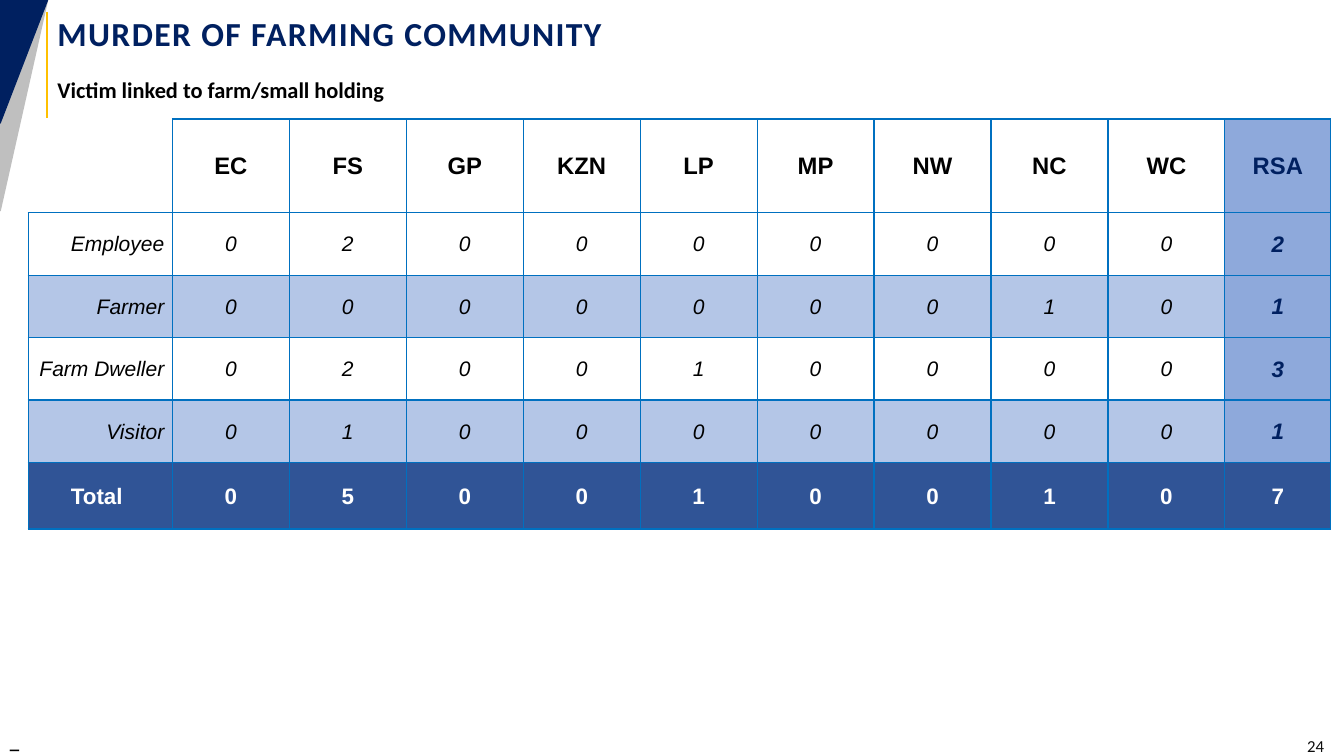
from lxml.etree import SubElement
from pptx import Presentation
from pptx.dml.color import RGBColor
from pptx.enum.shapes import MSO_CONNECTOR as Conn, MSO_SHAPE as Shape
from pptx.enum.text import MSO_ANCHOR as Anchor, MSO_AUTO_SIZE as Fit, PP_ALIGN as Align
from pptx.oxml.ns import qn
from pptx.util import Inches, Pt

COLORS = {
    "navy": "002060", "grey": "BFBFBF", "gold": "FFC000", "black": "000000",
    "ink": "0D0D0D", "white": "FFFFFF", "border": "0070C0",
    "band": "B4C6E7", "sum": "8EA9DB", "total": "305496",
}
HEADS = ["", "EC", "FS", "GP", "KZN", "LP", "MP", "NW", "NC", "WC", "RSA"]
COUNTS = {
    "Employee": [0, 2, 0, 0, 0, 0, 0, 0, 0],
    "Farmer": [0, 0, 0, 0, 0, 0, 0, 1, 0],
    "Farm Dweller": [0, 2, 0, 0, 1, 0, 0, 0, 0],
    "Visitor": [0, 1, 0, 0, 0, 0, 0, 0, 0],
}
WIDTHS = [1.43] + [1.16] * 9 + [1.05]
HEIGHTS = [0.93] + [0.62] * 4 + [0.66]


def color(name):
    return RGBColor.from_string(COLORS[name])


def style(para, size, tone, face, bold=False, italic=False, align=Align.LEFT):
    font = para.font
    font.size, font.name, font.bold, font.italic = Pt(size), face, bold, italic
    font.color.rgb = color(tone)
    para.alignment = align


def place(shape, left, top, width, height):
    shape.left, shape.top = Inches(left), Inches(top)
    shape.width, shape.height = Inches(width), Inches(height)


def add_corner(slide, left, top, width):
    """Draw the two hanging triangles and the upright rule beside the title."""
    for tone, height in (("grey", 2.09), ("navy", 1.22)):
        wedge = slide.shapes.add_shape(
            Shape.RIGHT_TRIANGLE, Inches(left), Inches(top), Inches(width), Inches(height))
        wedge._element.spPr.xfrm.set("flipV", "1")
        wedge.shadow.inherit = False
        wedge.fill.solid()
        wedge.fill.fore_color.rgb = color(tone)
        wedge.line.color.rgb = color(tone)
        wedge.line.width = Pt(1.25)
    edge = Inches(left + width)
    rule = slide.shapes.add_connector(
        Conn.STRAIGHT, edge, Inches(top + 1.17), edge, Inches(top + 0.12))
    rule.line.color.rgb = color("gold")
    rule.line.width = Pt(1.25)
    SubElement(rule._element.spPr, qn("a:effectLst"))


def add_heads(slide, left, top, width):
    """Fill the title and body placeholders."""
    title, body = slide.shapes.title, slide.placeholders[1]
    place(title, left, top, width, 0.49)
    place(body, left, top + 0.56, width, 0.48)
    for holder, text, anchor in (
            (title, "MURDER OF FARMING COMMUNITY", Anchor.MIDDLE),
            (body, "Victim linked to farm/small holding", Anchor.TOP)):
        frame = holder.text_frame
        frame.text = text
        frame.auto_size = Fit.NONE
        frame.vertical_anchor = anchor
    para = title.text_frame.paragraphs[0]
    style(para, 24, "navy", "Calibri", bold=True)
    para.line_spacing = 0.8
    para.runs[0].font._element.set("spc", "100")
    para = body.text_frame.paragraphs[0]
    style(para, 16, "black", "Calibri", bold=True)
    para.line_spacing, para.space_before, para.space_after = 1.08, Pt(6), Pt(2)
    props = para._element.get_or_add_pPr()
    props.set("marL", "0")
    props.set("indent", "0")
    bullet = SubElement(props, qn("a:buNone"))
    props.find(qn("a:defRPr")).addprevious(bullet)


def add_edges(cell, shown):
    """Line the sides named in shown, and clear the others."""
    props = cell._tc.get_or_add_tcPr()
    for side in "LRTB":
        edge = SubElement(props, qn(f"a:ln{side}"), w=str(Pt(1)))
        if side in shown:
            fill = SubElement(edge, qn("a:solidFill"))
            SubElement(fill, qn("a:srgbClr"), val=COLORS["border"])
        else:
            SubElement(edge, qn("a:noFill"))


def cell_look(row, col, last):
    """Return fill, text colour, size, bold and italic for a cell."""
    if row == last:
        return "total", "white", 16, True, False
    if col == len(HEADS) - 1:
        return "sum", "navy", 16 if row else 17, True, row > 0
    if row == 0:
        return None, "black", 17, True, False
    return None if row % 2 else "band", "black", 15, False, True


def add_counts(slide, left, top):
    rows = [HEADS] + [[name, *nums, sum(nums)] for name, nums in COUNTS.items()]
    sums = [sum(nums) for nums in zip(*COUNTS.values())]
    rows.append(["Total", *sums, sum(sums)])
    last = len(rows) - 1
    table = slide.shapes.add_table(
        len(rows), len(HEADS), Inches(left), Inches(top),
        Inches(sum(WIDTHS)), Inches(sum(HEIGHTS))).table
    table.first_row = table.horz_banding = False
    for part, width in zip(table.columns, WIDTHS):
        part.width = Inches(width)
    for part, height in zip(table.rows, HEIGHTS):
        part.height = Inches(height)
    for row, values in enumerate(rows):
        for col, value in enumerate(values):
            cell = table.cell(row, col)
            back, tone, size, bold, italic = cell_look(row, col, last)
            add_edges(cell, "LRTB" if row or col else "RB")
            if back:
                cell.fill.solid()
                cell.fill.fore_color.rgb = color(back)
            else:
                cell.fill.background()
            cell.vertical_anchor = Anchor.MIDDLE
            cell.margin_left = cell.margin_top = Inches(0.01)
            cell.margin_right = Inches(0.01 if col else 0.08)
            cell.margin_bottom = 0
            cell.text = str(value)
            label = col == 0 and row < last
            style(cell.text_frame.paragraphs[0], size, tone, "Arial", bold, italic,
                  Align.RIGHT if label else Align.CENTER)


def add_note(slide, box, text, tone, face, bold, align):
    note = slide.shapes.add_textbox(*map(Inches, box))
    frame = note.text_frame
    frame.word_wrap = True
    frame.vertical_anchor = Anchor.MIDDLE
    frame.text = text
    style(frame.paragraphs[0], 12, tone, face, bold, align=align)


def main():
    deck = Presentation()
    deck.slide_width, deck.slide_height = Inches(13.33), Inches(7.5)
    slide = deck.slides.add_slide(deck.slide_layouts[1])
    add_corner(slide, 0, 0, 0.47)
    add_heads(slide, 0.47, 0.12, 11.96)
    add_note(slide, (11.85, 7.27, 1.38, 0.26), "24", "ink", "Calibri", False, Align.RIGHT)
    add_note(slide, (0, 7.22, 13.33, 0.3), "_", "black", "Cabin", True, Align.LEFT)
    add_counts(slide, 0.28, 1.18)
    deck.save("out.pptx")


if __name__ == "__main__":
    main()
